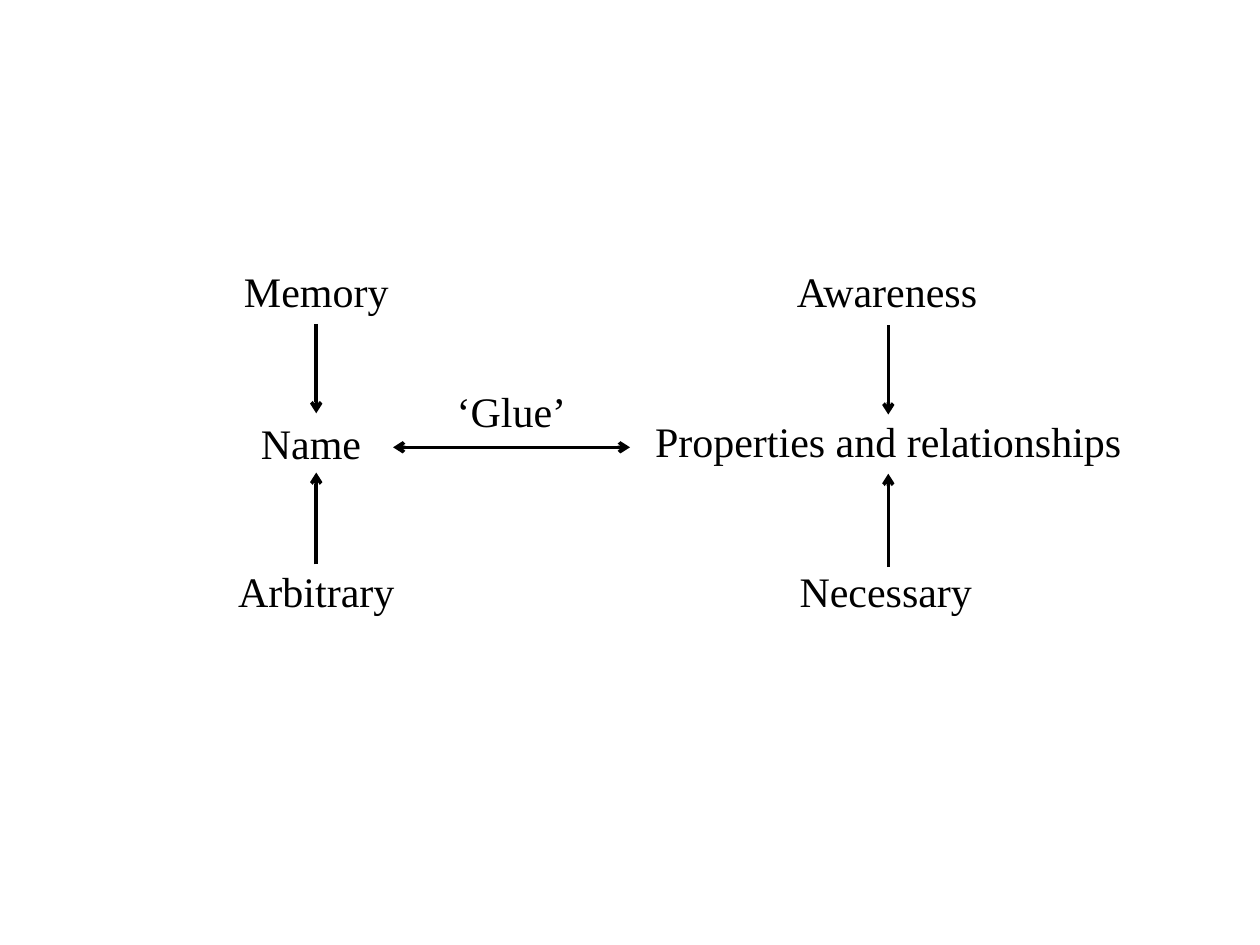
from dataclasses import dataclass

from lxml import etree
from pptx import Presentation
from pptx.dml.color import RGBColor
from pptx.enum.shapes import MSO_CONNECTOR
from pptx.enum.text import MSO_ANCHOR, PP_ALIGN
from pptx.oxml.ns import qn
from pptx.util import Inches, Pt

STRAIGHT = MSO_CONNECTOR.STRAIGHT
CENTER = PP_ALIGN.CENTER
TOP = MSO_ANCHOR.TOP


@dataclass(frozen=True)
class Theme:
    font: str = "Times New Roman"
    size: float = 24
    ink: RGBColor = RGBColor(0, 0, 0)
    line: float = 2
    inset: float = 0.01


THEME = Theme()
NAME_X, PROPERTIES_X = 2.51, 7.05
GLUE_X, GLUE_Y = 4.06, 3.05
TOP_Y, MIDDLE_Y, BOTTOM_Y = 2.1, 3.3, 4.48
LINK_Y = 3.55

# text, centre x, top, width, height
LABELS = [
    ("Memory", NAME_X, TOP_Y, 1.42, 0.44),
    ("Name ", NAME_X, MIDDLE_Y, 1.76, 0.23),
    ("Arbitrary", NAME_X, BOTTOM_Y, 1.85, 0.34),
    ("‘Glue’", GLUE_X, GLUE_Y, 1.8, 0.23),
    ("Awareness", PROPERTIES_X - 0.01, TOP_Y, 1.58, 0.44),
    ("Properties and relationships", PROPERTIES_X, MIDDLE_Y - 0.01, 4.25, 0.41),
    ("Necessary", PROPERTIES_X - 0.02, BOTTOM_Y, 1.42, 0.44),
]


def add_label(s, text, center, top, width, height):
    box = s.shapes.add_textbox(Inches(center - width / 2), Inches(top),
                               Inches(width), Inches(height))
    tf = box.text_frame
    tf.word_wrap = True
    tf.vertical_anchor = TOP
    tf.margin_left = tf.margin_right = Inches(THEME.inset)
    tf.margin_top = tf.margin_bottom = Inches(THEME.inset)
    tf.text = text
    p = tf.paragraphs[0]
    p.alignment = CENTER
    font = p.runs[0].font
    font.name = THEME.font
    font.size = Pt(THEME.size)
    font.color.rgb = THEME.ink


def add_arrow(s, start, end, both_ways=False):
    """Draw an arrow pointing at end, and at start too if both_ways."""
    arrow = s.shapes.add_connector(STRAIGHT, *map(Inches, start + end))
    arrow.line.color.rgb = THEME.ink
    arrow.line.width = Pt(THEME.line)
    ln = arrow.line._get_or_add_ln()
    for tag in ("a:headEnd", "a:tailEnd") if both_ways else ("a:tailEnd",):
        etree.SubElement(ln, qn(tag), type="arrow")
    etree.SubElement(arrow._element.spPr, qn("a:effectLst"))


def main():
    prs = Presentation()
    prs.slide_width, prs.slide_height = Inches(10), Inches(7.5)
    s = prs.slides.add_slide(prs.slide_layouts[6])
    for label in LABELS:
        add_label(s, *label)
    for x, shift in ((NAME_X, 0), (PROPERTIES_X, 0.01)):
        add_arrow(s, (x, 2.57 + shift), (x, 3.28 + shift))
        add_arrow(s, (x, BOTTOM_Y + 2 * shift), (x, 3.75 + shift))
    add_arrow(s, (3.12, LINK_Y), (5, LINK_Y), both_ways=True)
    prs.save("out.pptx")


if __name__ == "__main__":
    main()
